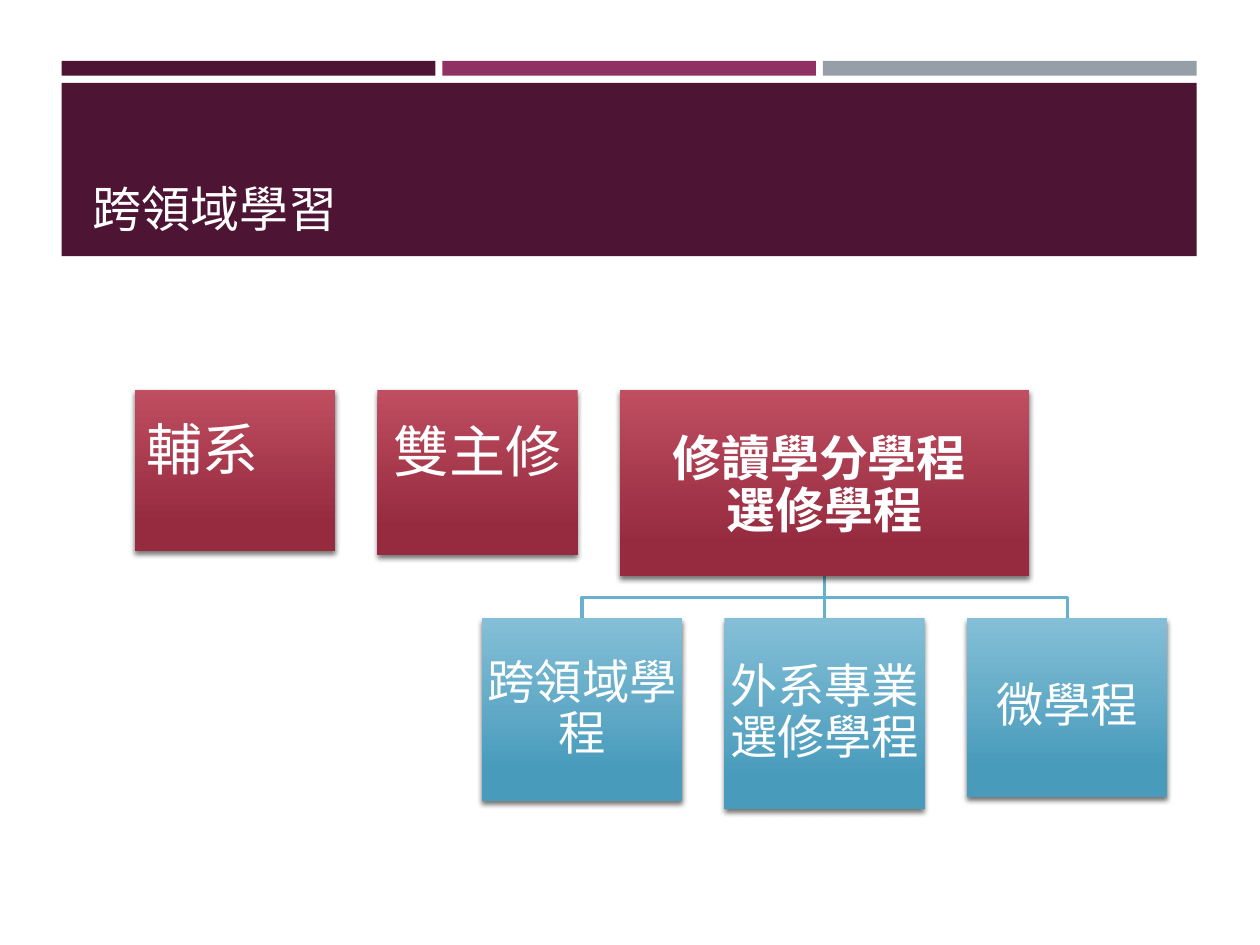
import pptx
import pptx.util
import pptx.dml.color
import pptx.enum.shapes
import pptx.enum.text
import pptx.oxml
import pptx.oxml.ns

Pt = pptx.util.Pt
RECT = pptx.enum.shapes.MSO_SHAPE.RECTANGLE
LINE = pptx.enum.shapes.MSO_CONNECTOR.STRAIGHT
ANCHOR = pptx.enum.text.MSO_ANCHOR
ALIGN = pptx.enum.text.PP_ALIGN

# Content
TITLE = "跨領域學習"
BARS = ["4D1434", "903163", "969FA7"]
RED, BLUE = ("BF4E61", "962A3F"), ("84BFD7", "489BBB")
# lines, width, height, text size, bold, right inset, bottom inset
TOP = [
    (["輔系"], 114.5, 92, 32, False, 39, 22),
    (["雙主修"], 114.5, 94.5, 32, False, 1.5, 22),
    (["修讀學分學程 ", "選修學程"], 234, 106.5, 28, True, 1.5, 1.5),
]
KIDS = [("跨領域學程", 104.5), ("外系專業選修學程", 109), ("微學程", 102)]

# Layout
LEFT, WIDE = 35.3, 648.5
GAP = 4
BOX, STEP = 114.5, 138.6
ROW1, ROW2, COL = 222.7, 353.3, 77

deck = pptx.Presentation()
deck.slide_width, deck.slide_height = Pt(720), Pt(540)
slide = deck.slides.add_slide(deck.slide_layouts[6])
shapes = slide.shapes


def color(text):
    return pptx.dml.color.RGBColor.from_string(text)


def block(x, y, w, h, fill):
    shape = shapes.add_shape(RECT, Pt(x), Pt(y), Pt(w), Pt(h))
    shape.shadow.inherit = False
    shape.line.fill.background()
    if isinstance(fill, str):
        shape.fill.solid()
        shape.fill.fore_color.rgb = color(fill)
        return shape
    shape.fill.gradient()
    shape.fill.gradient_angle = 270
    for stop, tone, pos in zip(shape.fill.gradient_stops, fill, (0, 0.84)):
        stop.color.rgb, stop.position = color(tone), pos
    return shape


def shade(shape):
    effect = shape._element.spPr.find(pptx.oxml.ns.qn("a:effectLst"))
    effect.append(pptx.oxml.parse_xml(
        f'<a:outerShdw {pptx.oxml.ns.nsdecls("a")} blurRad="{Pt(3)}" '
        f'dist="{Pt(2)}" dir="5400000" rotWithShape="0">'
        '<a:srgbClr val="000000"><a:alpha val="55000"/></a:srgbClr>'
        '</a:outerShdw>'))


def write(shape, lines, size, bold, align, anchor, insets, space=1.0):
    frame = shape.text_frame
    frame.word_wrap = True
    frame.vertical_anchor = anchor
    (frame.margin_left, frame.margin_top,
     frame.margin_right, frame.margin_bottom) = map(Pt, insets)
    for i, line in enumerate(lines):
        para = frame.add_paragraph() if i else frame.paragraphs[0]
        para.alignment = align
        para.line_spacing = space if i or len(lines) == 1 else 1.0
        run = para.add_run()
        run.text = line
        font = run.font
        font.name, font.size, font.bold = "Calibri", Pt(size), bold
        font.color.rgb = color("FFFFFF")


def card(x, y, w, h, fill, lines, size, bold, right=1.5, bottom=1.5):
    shape = block(x, y, w, h, fill)
    shade(shape)
    write(shape, lines, size, bold, ALIGN.CENTER, ANCHOR.MIDDLE,
          (1.5, 1.5, right, bottom), 0.9)


def stroke(shape):
    shape.line.color.rgb = color("66B1CE")
    shape.line.width = Pt(1.75)


# Header bars and title band
bar = (WIDE - GAP * 2) / 3
for i, tone in enumerate(BARS):
    block(LEFT + i * (bar + GAP), 34.8, bar, 8.4, tone)
block(LEFT, 47.4, WIDE, 99, BARS[0])
title = shapes.add_textbox(Pt(46), Pt(54), Pt(629), Pt(85))
write(title, [TITLE], 28, False, ALIGN.LEFT, ANCHOR.BOTTOM, (7.2, 3.6, 7.2, 3.6))

# Branch lines from the last top box to its children
hub = COL + 2 * STEP + TOP[2][1] / 2
base = ROW1 + TOP[2][2]
mid = (base + ROW2) / 2
for end in (hub - STEP, hub + STEP):
    pen = shapes.build_freeform(Pt(hub), Pt(base))
    pen.add_line_segments([(Pt(hub), Pt(mid)), (Pt(end), Pt(mid)),
                           (Pt(end), Pt(ROW2))], close=False)
    branch = pen.convert_to_shape()
    branch.fill.background()
    branch.shadow.inherit = False
    stroke(branch)
stem = shapes.add_connector(LINE, Pt(hub), Pt(base), Pt(hub), Pt(ROW2))
stem._element.spPr.append(pptx.oxml.parse_xml(
    f'<a:effectLst {pptx.oxml.ns.nsdecls("a")}/>'))
stroke(stem)

# Top row and children
for i, (lines, w, h, size, bold, right, bottom) in enumerate(TOP):
    card(COL + i * STEP, ROW1, w, h, RED, lines, size, bold, right, bottom)
for i, (label, h) in enumerate(KIDS):
    card(hub + (i - 1) * STEP - BOX / 2, ROW2, BOX, h, BLUE, [label], 27, False)

deck.save("out.pptx")
